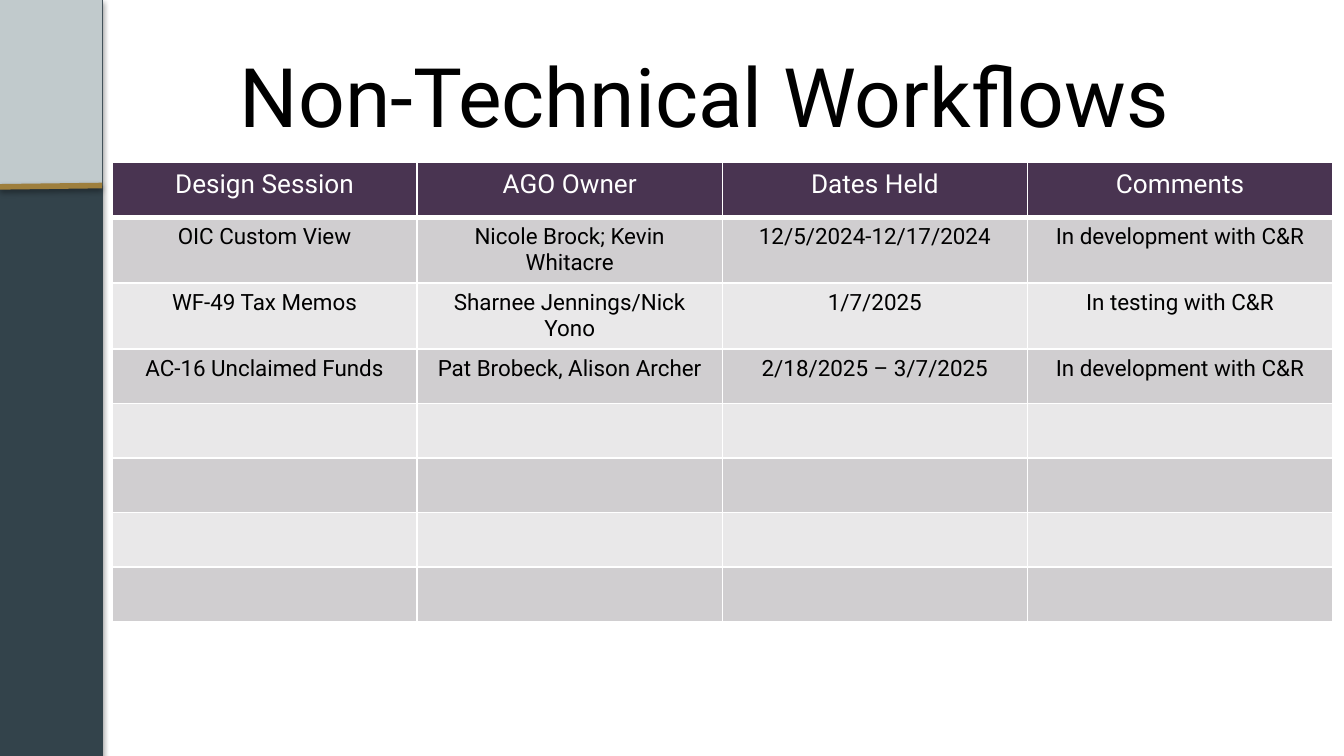
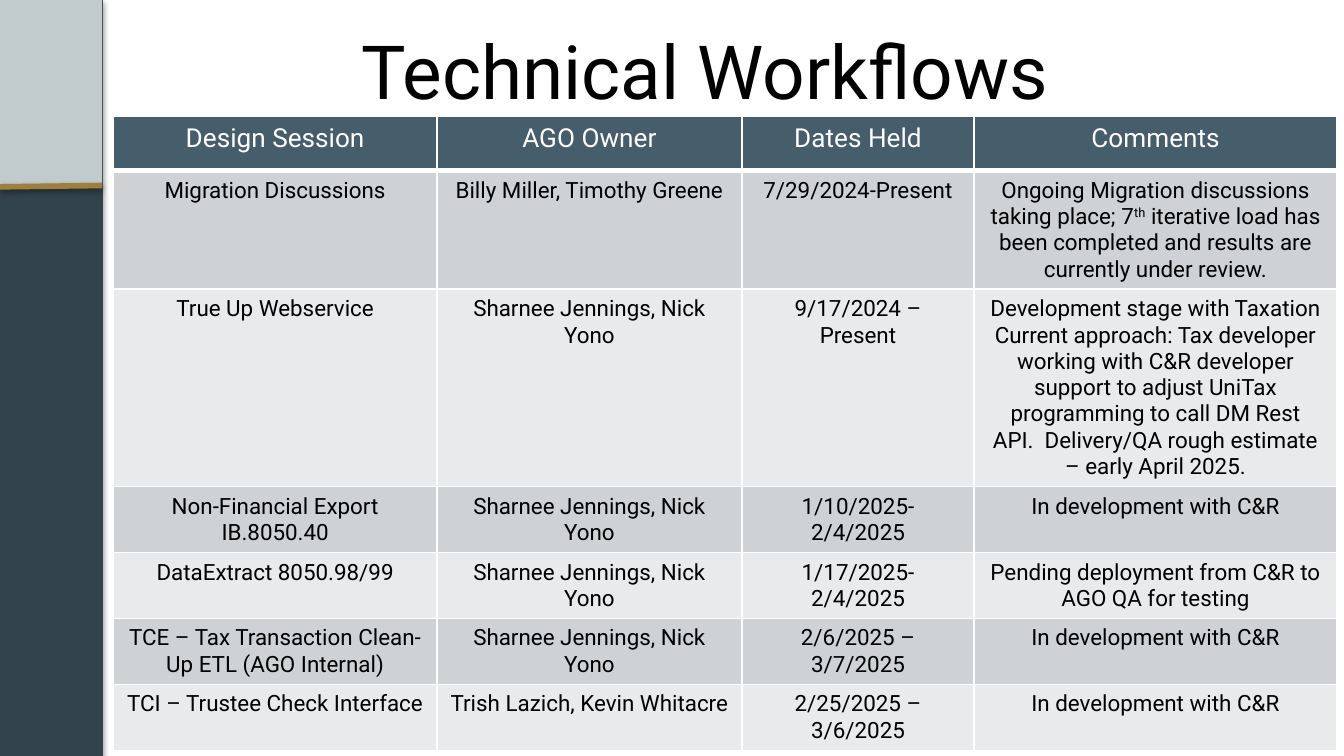
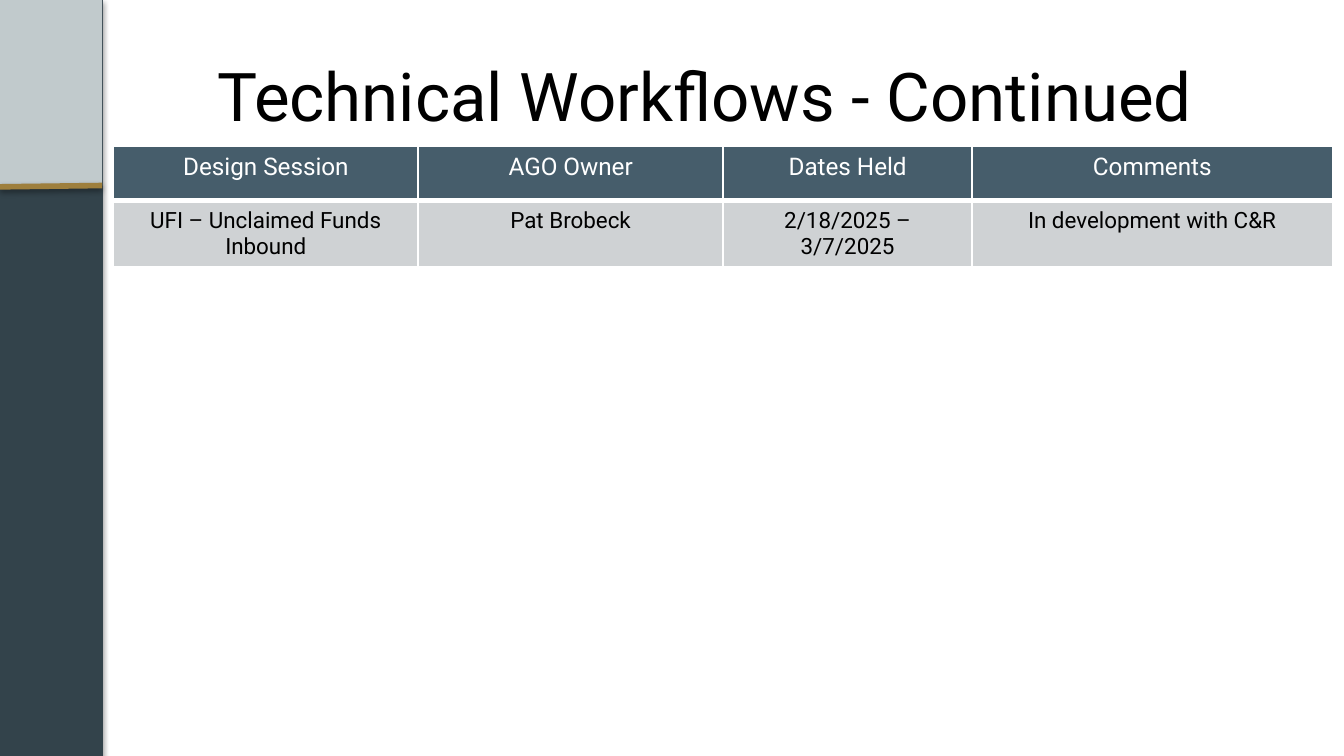
from lxml.etree import SubElement
from pptx import Presentation
from pptx.dml.color import RGBColor
from pptx.enum.shapes import MSO_CONNECTOR, MSO_SHAPE
from pptx.enum.text import MSO_ANCHOR, MSO_AUTO_SIZE, PP_ALIGN
from pptx.oxml.ns import qn
from pptx.util import Pt

COLORS = {
    "slate": "33434B", "mist": "C1CACC", "gold": "9E7F3D",
    "black": "000000", "white": "FFFFFF",
    "plum": "493451", "plum_dark": "D0CED0", "plum_light": "E9E8E9",
    "steel": "465D6B", "steel_dark": "CFD2D4", "steel_light": "E9EAEB",
}
FONT = "Roboto"
SLIDE_W, SLIDE_H = 720, 405
SIDEBAR = (0, 0, 54.7, SLIDE_H)
TITLE_BOX = (71.3, 16.6, 612.7, 67.7)
HIGH_TITLE_BOX = (71.3, 3.6, 612.7, 67.7)
HEADINGS = ["Design Session", "AGO Owner", "Dates Held", "Comments"]

NON_TECHNICAL = [
    ["OIC Custom View", "Nicole Brock; Kevin Whitacre", "12/5/2024-12/17/2024",
     "In development with C&R"],
    ["WF-49 Tax Memos", "Sharnee Jennings/Nick Yono", "1/7/2025", "In testing with C&R"],
    ["AC-16 Unclaimed Funds", "Pat Brobeck, Alison Archer", "2/18/2025 – 3/7/2025",
     "In development with C&R"],
] + [[""] * 4] * 4

# Text between carets is superscript; a line break starts a paragraph
TECHNICAL = [
    ["Migration Discussions", "Billy Miller, Timothy Greene", "7/29/2024-Present",
     "Ongoing Migration discussions taking place; 7^th^ iterative load has been "
     "completed and results are currently under review."],
    ["True Up Webservice", "Sharnee Jennings, Nick Yono", "9/17/2024 – Present",
     "Development stage with Taxation\nCurrent approach: Tax developer working with "
     "C&R developer support to adjust UniTax programming to call DM Rest API.  "
     "Delivery/QA rough estimate – early April 2025."],
    ["Non-Financial Export IB.8050.40", "Sharnee Jennings, Nick Yono",
     "1/10/2025-2/4/2025", "In development with C&R"],
    ["DataExtract 8050.98/99", "Sharnee Jennings, Nick Yono", "1/17/2025-2/4/2025",
     "Pending deployment from C&R to AGO QA for testing"],
    ["TCE – Tax Transaction Clean-Up ETL (AGO Internal)", "Sharnee Jennings, Nick Yono",
     "2/6/2025 – 3/7/2025", "In development with C&R"],
    ["TCI – Trustee Check Interface", "Trish Lazich, Kevin Whitacre",
     "2/25/2025 – 3/6/2025", "In development with C&R"],
]
CONTINUED = [
    ["UFI – Unclaimed Funds Inbound", "Pat Brobeck", "2/18/2025 – 3/7/2025",
     "In development with C&R"],
]


def rgb(name):
    return RGBColor.from_string(COLORS[name])


def add_run(paragraph, words, size, color):
    run = paragraph.add_run()
    run.text = words
    run.font.name, run.font.size = FONT, Pt(size)
    run.font.color.rgb = rgb(color)
    return run


def cast_shadow(part, opacity, distance):
    part_props = part.element.spPr
    effects = part_props.find(qn("a:effectLst"))
    if effects is None:
        effects = SubElement(part_props, qn("a:effectLst"))
    shadow = SubElement(effects, qn("a:outerShdw"), blurRad=str(Pt(3.1)),
                        dist=str(Pt(distance)), dir="5400000", rotWithShape="0")
    tint = SubElement(shadow, qn("a:srgbClr"), val=COLORS["black"])
    SubElement(tint, qn("a:alpha"), val=str(opacity * 1000))


def add_panel(slide, box, color):
    panel = slide.shapes.add_shape(MSO_SHAPE.RECTANGLE, *map(Pt, box))
    panel.shadow.inherit = False
    panel.fill.solid()
    panel.fill.fore_color.rgb = rgb(color)
    panel.line.fill.background()
    return panel


def add_sidebar(slide, box):
    """Draw the band on a slide and hand it to the master, behind its title."""
    left, top, width, height = box
    band = add_panel(slide, box, "slate")
    band.line.color.rgb, band.line.width = rgb("slate"), Pt(0.75)
    cast_shadow(band, 35, 1.8)
    cap = add_panel(slide, (left, top, width, 99.4), "mist")
    rule = slide.shapes.add_connector(MSO_CONNECTOR.STRAIGHT, Pt(left), Pt(top + 100.1),
                                      Pt(left + width), Pt(top + 99.4))
    rule.line.color.rgb, rule.line.width = rgb("gold"), Pt(3)
    cast_shadow(rule, 38, 1.6)

    master_tree = slide.slide_layout.slide_master.shapes.element
    for order, part in enumerate((band, cap, rule)):
        part.element.xpath(".//p:cNvPr")[0].set("id", str(101 + order))
        master_tree.insert(2 + order, part.element)


def place(shape, box):
    shape.left, shape.top, shape.width, shape.height = map(Pt, box)


def prepare_template(prs):
    """Keep only the title layout, with its title in the shared position."""
    title_only = prs.slide_layouts[5]
    for layout in list(prs.slide_layouts):
        if layout.name != title_only.name:
            prs.slide_layouts.remove(layout)
    for template in (prs.slide_master, title_only):
        for holder in list(template.placeholders):
            if holder.placeholder_format.idx == 0 and "Title" in holder.name:
                place(holder, TITLE_BOX)
            else:
                holder.element.getparent().remove(holder.element)
    return title_only


def add_title(slide, box, words, size):
    title = slide.shapes.title
    place(title, box)
    frame = title.text_frame
    frame.auto_size = MSO_AUTO_SIZE.NONE
    frame.word_wrap = True
    frame.vertical_anchor = MSO_ANCHOR.MIDDLE
    heading = frame.paragraphs[0]
    heading.alignment = PP_ALIGN.CENTER
    add_run(heading, words, size, "black")


def set_borders(cell, top, bottom):
    cell_props = cell._tc.get_or_add_tcPr()
    widths = {"a:lnL": 1, "a:lnR": 1, "a:lnT": top, "a:lnB": bottom}
    for order, (side, width) in enumerate(widths.items()):
        border = SubElement(cell_props, qn(side), w=str(Pt(width)))
        fill = SubElement(border, qn("a:solidFill"))
        SubElement(fill, qn("a:srgbClr"), val=COLORS["white"])
        cell_props.insert(order, border)


def fill_cell(cell, words, size, color, fill):
    cell.fill.solid()
    cell.fill.fore_color.rgb = rgb(fill)
    for number, line in enumerate(words.split("\n")):
        frame = cell.text_frame
        paragraph = frame.add_paragraph() if number else frame.paragraphs[0]
        paragraph.alignment = PP_ALIGN.CENTER
        for part, piece in enumerate(line.split("^")):
            if piece:
                run = add_run(paragraph, piece, size, color)
                if part % 2:
                    run._r.get_or_add_rPr().set("baseline", "30000")


def add_schedule(slide, box, sessions, widths, heights, palette, heading_size=14):
    rows = [HEADINGS] + sessions
    frame = slide.shapes.add_table(len(rows), len(HEADINGS), *map(Pt, box))
    table = frame.table
    table.first_row = table.horz_banding = False
    for column, width in zip(table.columns, widths):
        column.width = Pt(width)
    for row, height in zip(table.rows, heights):
        row.height = Pt(height)
    place(frame, box)

    for r, entries in enumerate(rows):
        # Header row, then alternating dark and light bands
        size, color, fill = 12, "black", palette + ("_dark" if r % 2 else "_light")
        if r == 0:
            size, color, fill = heading_size, "white", palette
        for c, words in enumerate(entries):
            cell = table.cell(r, c)
            fill_cell(cell, words, size, color, fill)
            set_borders(cell, top=3 if r == 1 else 1, bottom=3 if r == 0 else 1)


def main():
    prs = Presentation()
    prs.slide_width, prs.slide_height = Pt(SLIDE_W), Pt(SLIDE_H)
    layout = prepare_template(prs)

    # Non-technical workflows
    slide = prs.slides.add_slide(layout)
    add_sidebar(slide, SIDEBAR)
    add_title(slide, TITLE_BOX, "Non-Technical Workflows", 44)
    add_schedule(slide, (60, 87.1, 654, 240.5), NON_TECHNICAL,
                 [163.5] * 4, [29.2] * 8, "plum")

    # Technical workflows
    slide = prs.slides.add_slide(layout)
    add_title(slide, HIGH_TITLE_BOX, "Technical Workflows", 40)
    add_schedule(slide, (60.8, 62.3, 655.5, 331.9), TECHNICAL,
                 [173.3, 163.4, 124.4, 194.4],
                 [29.2, 20.2, 15.8, 29.2, 20.9, 18.7, 18.7], "steel")

    # Technical workflows, continued
    slide = prs.slides.add_slide(layout)
    add_title(slide, TITLE_BOX, "Technical Workflows - Continued", 36)
    add_schedule(slide, (60.8, 78.2, 653, 65.5), CONTINUED,
                 [163.2, 163.4, 133.4, 193], [29.2] * 2, "steel", heading_size=13)

    prs.save("out.pptx")


if __name__ == "__main__":
    main()
